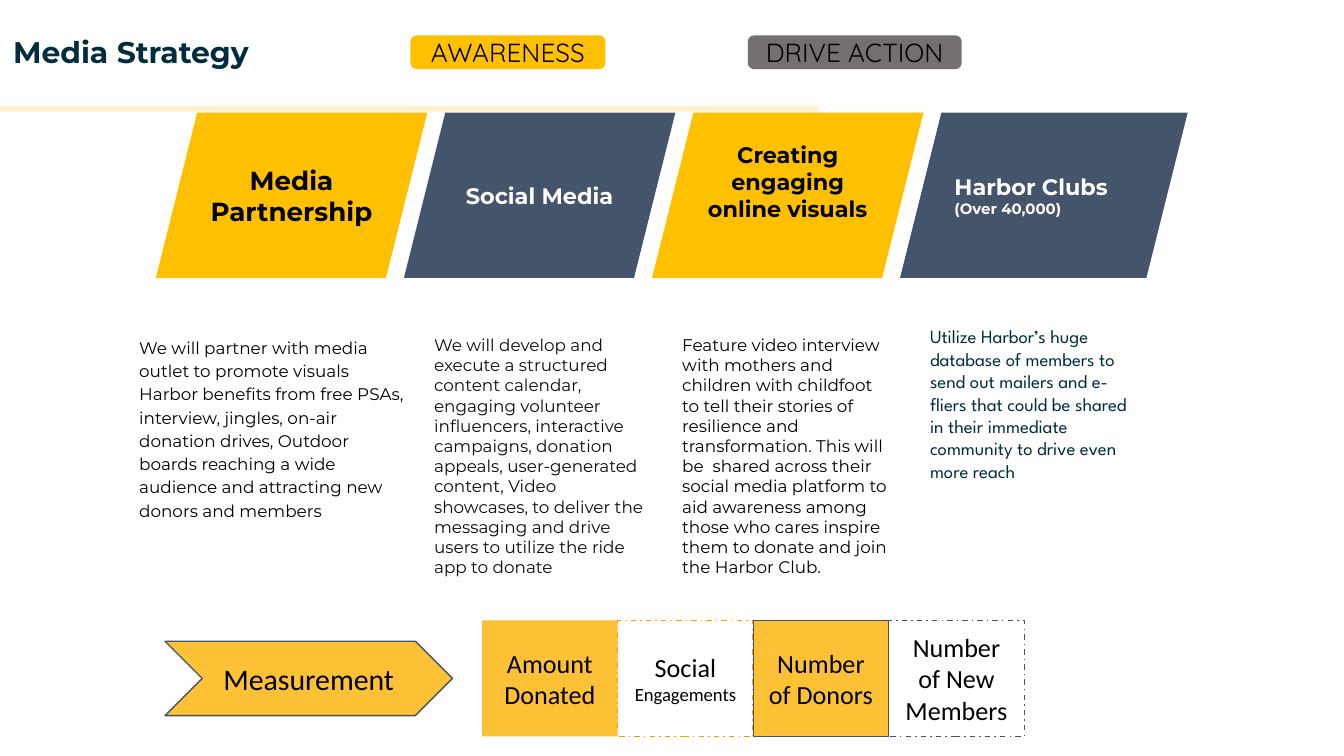
from pptx import Presentation
from pptx.dml.color import RGBColor
from pptx.enum.dml import MSO_LINE
from pptx.enum.shapes import MSO_SHAPE
from pptx.enum.text import MSO_ANCHOR, MSO_AUTO_SIZE, PP_ALIGN
from pptx.util import Pt

RECTANGLE = MSO_SHAPE.RECTANGLE
ROUNDED = MSO_SHAPE.ROUNDED_RECTANGLE
PARALLELOGRAM = MSO_SHAPE.PARALLELOGRAM
CHEVRON = MSO_SHAPE.CHEVRON
DASH_DOT = MSO_LINE.DASH_DOT
LEFT, CENTER = PP_ALIGN.LEFT, PP_ALIGN.CENTER

COLORS = {
    "black": "000000",
    "white": "FFFFFF",
    "navy": "002C3F",
    "ink": "0D0D0D",
    "slate": "44546A",
    "gray": "757070",
    "amber": "FFC000",
    "gold": "FCC135",
    "orange": "FF9900",
    "cream": "FFF2CC",
}

CHANNEL_LEFT, CHANNEL_PITCH = 83.5, 132.9
METRIC_LEFT, METRIC_WIDTH = 258.3, 72.6

# Paragraphs are lists of runs: (text, size).
CHANNELS = [
    ([[("Media Partnership", 14)]], "amber", "black", CENTER, 145.4, 7.2),
    ([[("Social Media", 12)]], "slate", "white", CENTER, 145.4, 7.2),
    ([[("Creating engaging online visuals", 12)]], "amber", "black", CENTER, 145.4, 21.8),
    ([[("Harbor Clubs", 12)], [("(Over 40,000)", 8)]], "slate", "white", LEFT, 154.1, 7.2),
]

METRICS = [
    ([("Amount Donated", 14)], "gold", None, None),
    ([("Social ", 14), ("Engagements", 10)], None, "orange", DASH_DOT),
    ([("Number of Donors", 14)], "gold", "slate", None),
    ([("Number of New Members", 14)], None, "slate", DASH_DOT),
]

PARTNERSHIP = (
    "We will partner with media outlet to promote visuals Harbor benefits from "
    "free PSAs, interview, jingles, on-air donation drives, Outdoor boards "
    "reaching a wide audience and attracting new donors and members"
)
SOCIAL = (
    "We will develop and execute a structured content calendar, engaging "
    "volunteer influencers, interactive campaigns, donation appeals, "
    "user-generated content, Video showcases, to deliver the messaging and "
    "drive users to utilize the ride app to donate"
)
VISUALS = (
    "Feature video interview with mothers and children with childfoot to tell "
    "their stories of resilience and transformation. This will be  shared across "
    "their social media platform to aid awareness among those who cares inspire "
    "them to donate and join the Harbor Club."
)
CLUBS = (
    "Utilize Harbor’s huge database of members to send out mailers and e-fliers "
    "that could be shared in their immediate community to drive even more reach"
)


def rgb(name):
    return RGBColor.from_string(COLORS[name])


def write(text_frame, paragraphs, font, color, bold=False, align=LEFT):
    for index, runs in enumerate(paragraphs):
        paragraph = text_frame.paragraphs[0] if index == 0 else text_frame.add_paragraph()
        paragraph.alignment = align
        for text, size in runs:
            run = paragraph.add_run()
            run.text = text
            run.font.name = font
            run.font.size = Pt(size)
            run.font.bold = bold
            run.font.color.rgb = rgb(color)


def set_margins(text_frame, margin):
    text_frame.margin_left = text_frame.margin_right = Pt(margin)
    text_frame.margin_top = text_frame.margin_bottom = Pt(margin)


def add_block(slide, kind, box, fill=None, line=None, dash=None, margin=7.2):
    """Add a preset shape with its text anchored in the middle."""
    shape = slide.shapes.add_shape(kind, *map(Pt, box))
    shape.shadow.inherit = False
    if fill:
        shape.fill.solid()
        shape.fill.fore_color.rgb = rgb(fill)
    else:
        shape.fill.background()
    if line:
        shape.line.color.rgb = rgb(line)
        shape.line.width = Pt(0.75)
        if dash:
            shape.line.dash_style = dash
    else:
        shape.line.fill.background()
    text_frame = shape.text_frame
    text_frame.word_wrap = True
    text_frame.vertical_anchor = MSO_ANCHOR.MIDDLE
    set_margins(text_frame, margin)
    return shape


def add_text(slide, box, text, size, font, color, bold=False):
    text_frame = slide.shapes.add_textbox(*map(Pt, box)).text_frame
    text_frame.word_wrap = True
    text_frame.auto_size = MSO_AUTO_SIZE.SHAPE_TO_FIT_TEXT
    set_margins(text_frame, 7.2)
    write(text_frame, [[(text, size)]], font, color, bold)
    return text_frame.paragraphs[0]


def add_header(slide):
    add_block(slide, RECTANGLE, (0, 56.9, 438.5, 2.9), "cream")
    add_text(slide, (0, 10.8, 180.7, 33.8), "Media Strategy", 16, "Montserrat", "navy", True)
    for label, left, width, color in (
        ("AWARENESS", 220.3, 103.7, "amber"),
        ("DRIVE ACTION", 401, 113.8, "gray"),
    ):
        tag = add_block(slide, ROUNDED, (left, 19.4, width, 17.3), color, color, margin=0)
        write(tag.text_frame, [[(label, 14)]], "Quicksand", "black", align=CENTER)


def add_channels(slide):
    for index, (paragraphs, fill, color, align, width, bottom) in enumerate(CHANNELS):
        left = CHANNEL_LEFT + index * CHANNEL_PITCH
        banner = add_block(slide, PARALLELOGRAM, (left, 60.4, width, 88.5), fill)
        banner.adjustments[0] = 0.25
        banner.text_frame.margin_bottom = Pt(bottom)
        write(banner.text_frame, paragraphs, "Montserrat", color, True, align)


def add_descriptions(slide):
    partnership = add_text(
        slide, (67.5, 172.1, 158.4, 113), PARTNERSHIP, 9, "Montserrat", "black"
    )
    partnership.line_spacing = 1.15
    partnership.space_after = Pt(12)
    add_text(slide, (225.5, 172.1, 126.7, 159.8), SOCIAL, 9, "Montserrat", "ink")
    add_text(slide, (358.4, 172.1, 126.7, 145.4), VISUALS, 9, "Montserrat", "black")
    add_text(slide, (491.2, 167, 126.7, 111.6), CLUBS, 10, "League Spartan", "navy")


def add_measurement(slide):
    for index, (runs, fill, line, dash) in enumerate(METRICS):
        left = METRIC_LEFT + index * METRIC_WIDTH
        box = (left, 332.4, METRIC_WIDTH, 62.2)
        metric = add_block(slide, RECTANGLE, box, fill, line, dash)
        write(metric.text_frame, [runs], "Calibri", "black", align=CENTER)
    arrow = add_block(slide, CHEVRON, (88.4, 343.6, 154, 39.8), "gold", "slate")
    write(arrow.text_frame, [[("Measurement", 16)]], "Calibri", "black", align=CENTER)


def main():
    presentation = Presentation()
    presentation.slide_width = Pt(720)
    presentation.slide_height = Pt(405)
    slide = presentation.slides.add_slide(presentation.slide_layouts[6])
    add_header(slide)
    add_channels(slide)
    add_descriptions(slide)
    add_measurement(slide)
    presentation.save("out.pptx")


if __name__ == "__main__":
    main()
